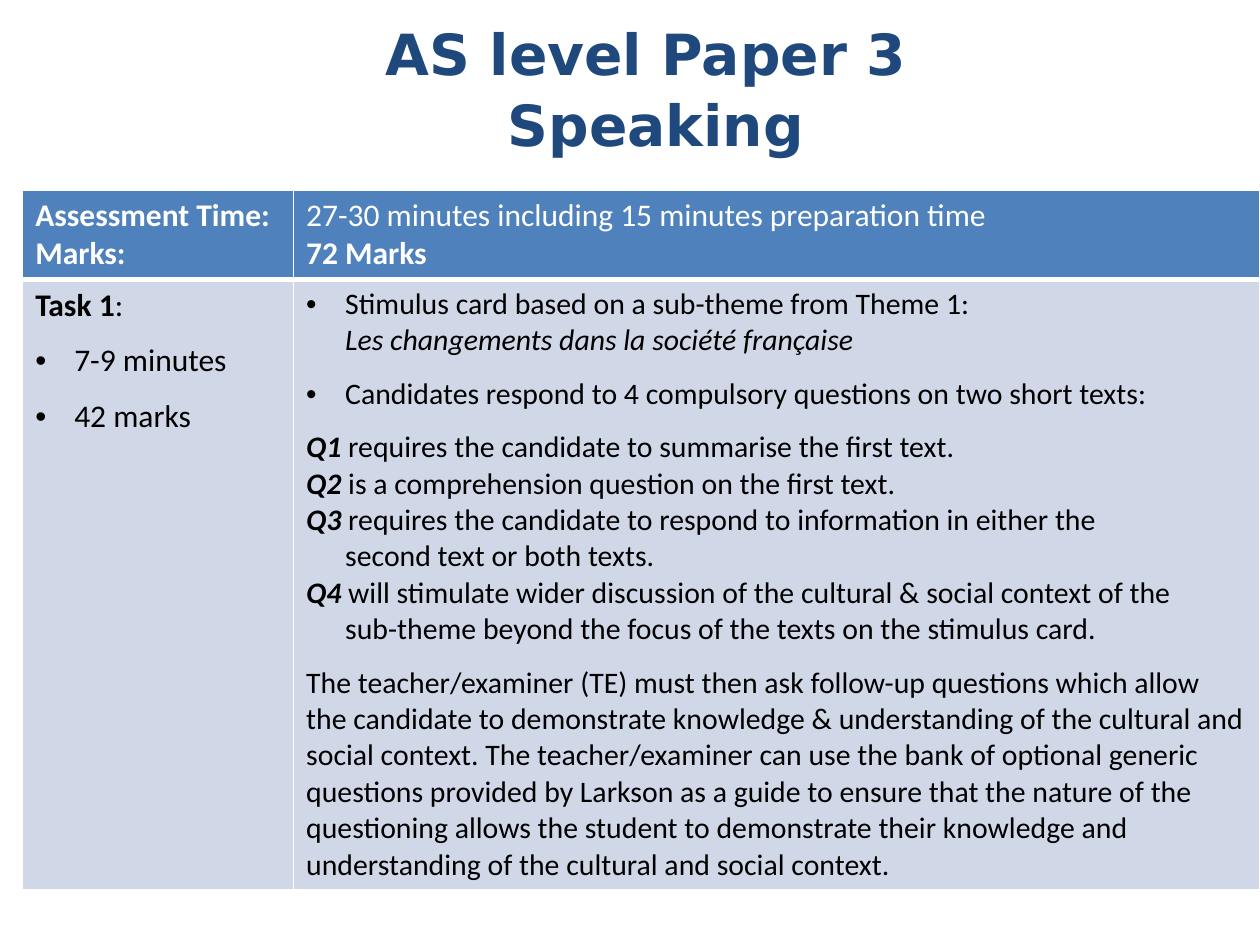
from lxml import etree
from pptx import Presentation
from pptx.dml.color import RGBColor
from pptx.enum.text import MSO_ANCHOR, MSO_AUTO_SIZE, PP_ALIGN
from pptx.oxml.ns import qn
from pptx.util import Inches, Pt

MIDDLE, CENTER, NO_FIT = MSO_ANCHOR.MIDDLE, PP_ALIGN.CENTER, MSO_AUTO_SIZE.NONE
NAVY = RGBColor(0x1F, 0x49, 0x7D)
BLUE = RGBColor(0x4F, 0x81, 0xBD)
PALE = RGBColor(0xD0, 0xD8, 0xE8)
WHITE = RGBColor(0xFF, 0xFF, 0xFF)
BLACK = RGBColor(0x00, 0x00, 0x00)
INDENT = Inches(0.31)
GAP = 9.8
BULLET = {"bullet": True, "gap": GAP}

HEAD = [
    [([("Assessment Time:", "b")], {}), ([("Marks:", "b")], {})],
    [([("27-30 minutes including 15 minutes preparation time", "")], {}),
     ([("72 Marks", "b")], {})],
]
TASK = [
    ([("Task 1", "b"), (":", "")], {}),
    ([("7-9 minutes", "")], BULLET),
    ([("42 marks", "")], BULLET),
]
DETAIL = [
    ([("Stimulus card based on a sub-theme from Theme 1:", "")], {"bullet": True}),
    ([("Les changements dans la société française", "i")], {"inset": True}),
    ([("Candidates respond to 4 compulsory questions on two short texts:", "")], BULLET),
    ([("Q1", "bi"), (" requires the candidate to summarise the first text.", "")], {"gap": GAP}),
    ([("Q2", "bi"), (" is a comprehension question on the first text.", "")], {}),
    ([("Q3", "bi"),
      (" requires the candidate to respond to information in either the", "")], {}),
    ([("second text or both texts.", "")], {"inset": True}),
    ([("Q4", "bi"),
      (" will stimulate wider discussion of the cultural & social context of the", "")], {}),
    ([("sub-theme beyond the focus of the texts on the stimulus card.", "")], {"inset": True}),
    ([("The teacher/examiner (TE) must then ask follow-up questions which allow the "
       "candidate to demonstrate knowledge & understanding of the cultural and social "
       "context. The teacher/examiner can use the bank of optional generic questions "
       "provided by Larkson as a guide to ensure that the nature of the questioning "
       "allows the student to demonstrate their knowledge and understanding of the "
       "cultural and social context.", "")], {"gap": GAP}),
]


def write(para, runs, size, color, face="Calibri", bullet=False, inset=False, gap=0):
    """Fill a paragraph with (text, style) runs, where style holds b and i."""
    props = para._p.get_or_add_pPr()
    if bullet or inset:
        props.set("marL", str(INDENT))
    if bullet:
        props.set("indent", str(-INDENT))
        etree.SubElement(props, qn("a:buFont"), typeface="Arial")
        etree.SubElement(props, qn("a:buChar"), char="•")
    if gap:
        para.space_before = Pt(gap)
    for text, style in runs:
        run = para.add_run()
        run.text = text
        font = run.font
        font.name, font.size, font.color.rgb = face, Pt(size), color
        font.bold, font.italic = "b" in style, "i" in style


def add_title(slide, left, top, width, height):
    """Place the two-line heading in the title placeholder."""
    title = slide.shapes.title
    title.left, title.top, title.width, title.height = left, top, width, height
    frame = title.text_frame
    frame.auto_size, frame.vertical_anchor, frame.word_wrap = NO_FIT, MIDDLE, True
    para = frame.paragraphs[0]
    para.alignment, para.line_spacing = CENTER, 1.05
    look = {"size": 32.4, "color": NAVY, "face": "DejaVu Sans"}
    write(para, [("AS level Paper 3 ", "b")], **look)
    para.add_line_break()
    write(para, [("Speaking", "b")], **look)


def edge(cell, **widths):
    """Draw white cell borders, given in points by side."""
    props = cell._tc.get_or_add_tcPr()
    for spot, (side, width) in enumerate(widths.items()):
        line = etree.Element(qn("a:ln" + side), w=str(Pt(width)))
        fill = etree.SubElement(line, qn("a:solidFill"))
        etree.SubElement(fill, qn("a:srgbClr"), val=str(WHITE))
        props.insert(spot, line)


def fill_cell(cell, lines, size, color, back):
    """Colour a cell and write its paragraphs."""
    cell.fill.solid()
    cell.fill.fore_color.rgb = back
    frame = cell.text_frame
    for spot, (runs, form) in enumerate(lines):
        para = frame.add_paragraph() if spot else frame.paragraphs[0]
        write(para, runs, size, color, **form)


def add_grid(slide, left, top, width, height):
    """Place the assessment table in the given box."""
    grid = slide.shapes.add_table(2, 2, left, top, width, height).table
    grid.columns[0].width = Inches(2.15)
    grid.columns[1].width = width - Inches(2.15)
    grid.rows[0].height = Inches(0.71)
    grid.rows[1].height = height - Inches(0.71)
    for col, (head, body, size) in enumerate(zip(HEAD, (TASK, DETAIL), (18, 17))):
        fill_cell(grid.cell(0, col), head, 18, WHITE, BLUE)
        fill_cell(grid.cell(1, col), body, size, BLACK, PALE)
        edge(grid.cell(0, col), L=1, R=1, T=1, B=3)
        edge(grid.cell(1, col), L=1, R=1, T=3, B=1)


def main():
    """Build and save the slide."""
    deck = Presentation()
    deck.slide_width, deck.slide_height = Inches(10), Inches(7.5)
    slide = deck.slides.add_slide(deck.slide_layouts[0])
    spare = slide.placeholders[1].element
    spare.getparent().remove(spare)
    add_title(slide, Inches(2.32), Inches(0.33), Inches(5.77), Inches(0.72))
    add_grid(slide, Inches(0.18), Inches(1.51), Inches(9.82), Inches(5.55))
    deck.save("out.pptx")


if __name__ == "__main__":
    main()
